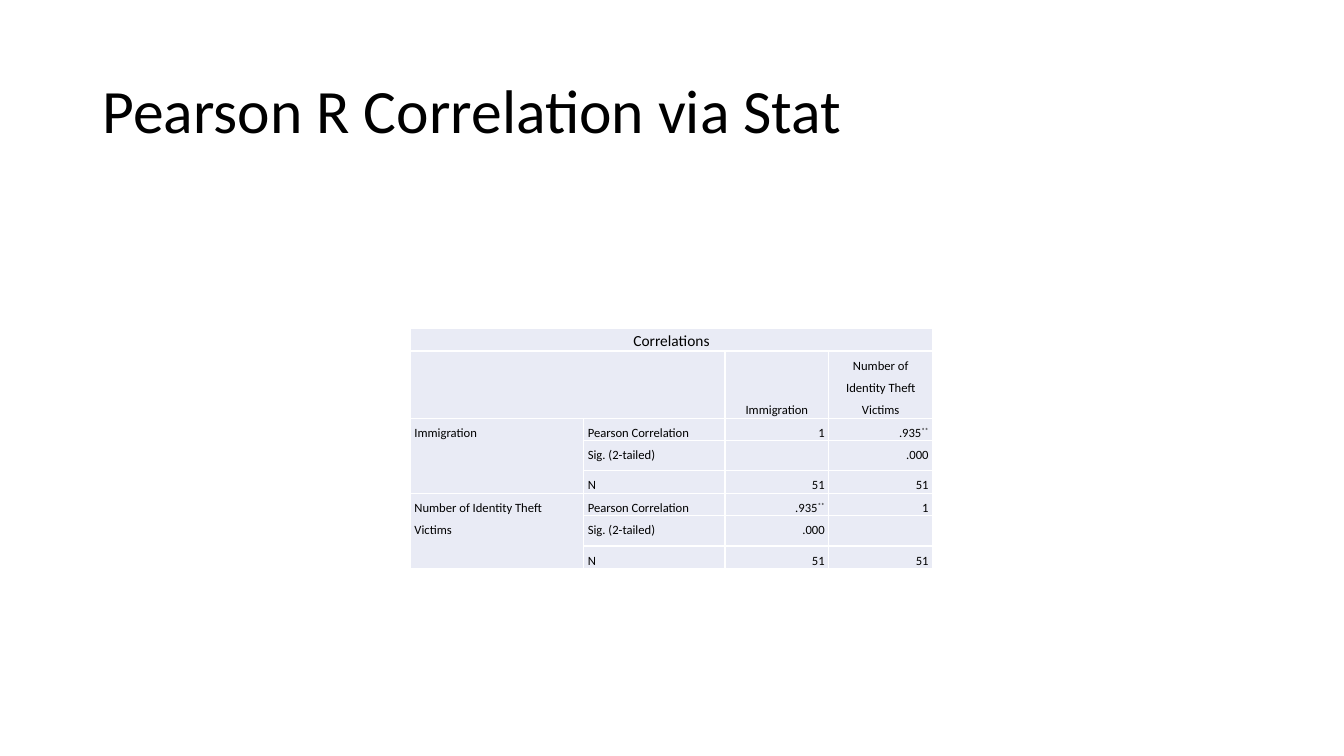
from lxml.etree import SubElement
from pptx import Presentation
from pptx.dml.color import RGBColor
from pptx.enum.text import MSO_ANCHOR as Anchor, PP_ALIGN as Align
from pptx.oxml.ns import qn
from pptx.util import Inches, Pt


def color(hex_string):
    return RGBColor.from_string(hex_string)


class SlideBuilder:
    FONT = "Calibri"
    INK = "000000"
    CELL_FILL = "E9EBF5"
    GRID = "FFFFFF"
    LINE_HEIGHT = Pt(16)
    INDENT = Inches(0.04)

    def __init__(self, slide):
        self.slide = slide

    def add_run(self, paragraph, text, size, superscript=False):
        run = paragraph.add_run()
        run.text = text
        for name, value in {"name": self.FONT, "size": Pt(size)}.items():
            setattr(run.font, name, value)
        run.font.color.rgb = color(self.INK)
        if superscript:
            run._r.get_or_add_rPr().set("baseline", "30000")

    def title(self, text, left, top, width, height):
        box = self.slide.shapes.add_textbox(
            Inches(left), Inches(top), Inches(width), Inches(height))
        frame = box.text_frame
        for name, value in {"word_wrap": True, "vertical_anchor": Anchor.MIDDLE}.items():
            setattr(frame, name, value)
        heading = frame.paragraphs[0]
        heading.line_spacing = 0.9
        self.add_run(heading, text, 44)

    def table(self, left, top, widths, line_counts):
        heights = [self.LINE_HEIGHT * count for count in line_counts]
        grid = self.slide.shapes.add_table(
            len(heights), len(widths), Inches(left), Inches(top),
            Inches(sum(widths)), sum(heights)).table
        for column, width in zip(grid.columns, widths):
            column.width = Inches(width)
        for row, height in zip(grid.rows, heights):
            row.height = height
        return grid

    def borders(self, cell):
        properties = cell._tc.get_or_add_tcPr()
        for position, side in enumerate(("lnL", "lnR", "lnT", "lnB")):
            line = SubElement(properties, qn(f"a:{side}"), w=str(Pt(1)))
            fill = SubElement(line, qn("a:solidFill"))
            SubElement(fill, qn("a:srgbClr"), val=self.GRID)
            properties.insert(position, line)

    def cell(self, cell, text, size, align, anchor):
        margins = {f"margin_{side}": 0 for side in ("left", "right", "top", "bottom")}
        for name, value in {**margins, "vertical_anchor": anchor}.items():
            setattr(cell, name, value)
        cell.fill.solid()
        cell.fill.fore_color.rgb = color(self.CELL_FILL)
        self.borders(cell)
        paragraph = cell.text_frame.paragraphs[0]
        for name, value in {"alignment": align, "line_spacing": self.LINE_HEIGHT}.items():
            setattr(paragraph, name, value)
        for side in ("marL", "marR"):
            paragraph._p.get_or_add_pPr().set(side, str(self.INDENT))
        # Significance stars are raised
        value, stars, _ = text.partition("**")
        for part in filter(None, (value, stars)):
            self.add_run(paragraph, part, size, superscript=part == "**")


def main():
    deck = Presentation()
    deck.slide_width, deck.slide_height = Inches(13.33), Inches(7.5)
    builder = SlideBuilder(deck.slides.add_slide(deck.slide_layouts[6]))

    # Title
    builder.title("Pearson R Correlation via Stat", 0.92, 0.4, 11.5, 1.45)

    # Correlation matrix
    victims = "Number of Identity Theft Victims"
    matrix = [
        ["Correlations", "", "", ""],
        ["", "", "Immigration", victims],
        ["Immigration", "Pearson Correlation", "1", ".935**"],
        ["", "Sig. (2-tailed)", "", ".000"],
        ["", "N", "51", "51"],
        [victims, "Pearson Correlation", ".935**", "1"],
        ["", "Sig. (2-tailed)", ".000", ""],
        ["", "N", "51", "51"],
    ]
    correlations = builder.table(4.07, 3.26, [1.72, 1.4, 1.03, 1.03],
                                 [1, 3] + [1] * 6)
    for row, texts in enumerate(matrix):
        for column, text in enumerate(texts):
            if row < 2:
                align = Align.CENTER
                anchor = (Anchor.MIDDLE, Anchor.BOTTOM)[row]
            else:
                align = Align.LEFT if column < 2 else Align.RIGHT
                anchor = Anchor.TOP
            size = 11 if row == 0 else 9
            builder.cell(correlations.cell(row, column), text, size, align, anchor)

    # Merged headings: first and last cell
    for first, last in (((0, 0), (0, 3)), ((1, 0), (1, 1)),
                        ((2, 0), (4, 0)), ((5, 0), (7, 0))):
        correlations.cell(*first).merge(correlations.cell(*last))

    deck.save("out.pptx")


if __name__ == "__main__":
    main()
